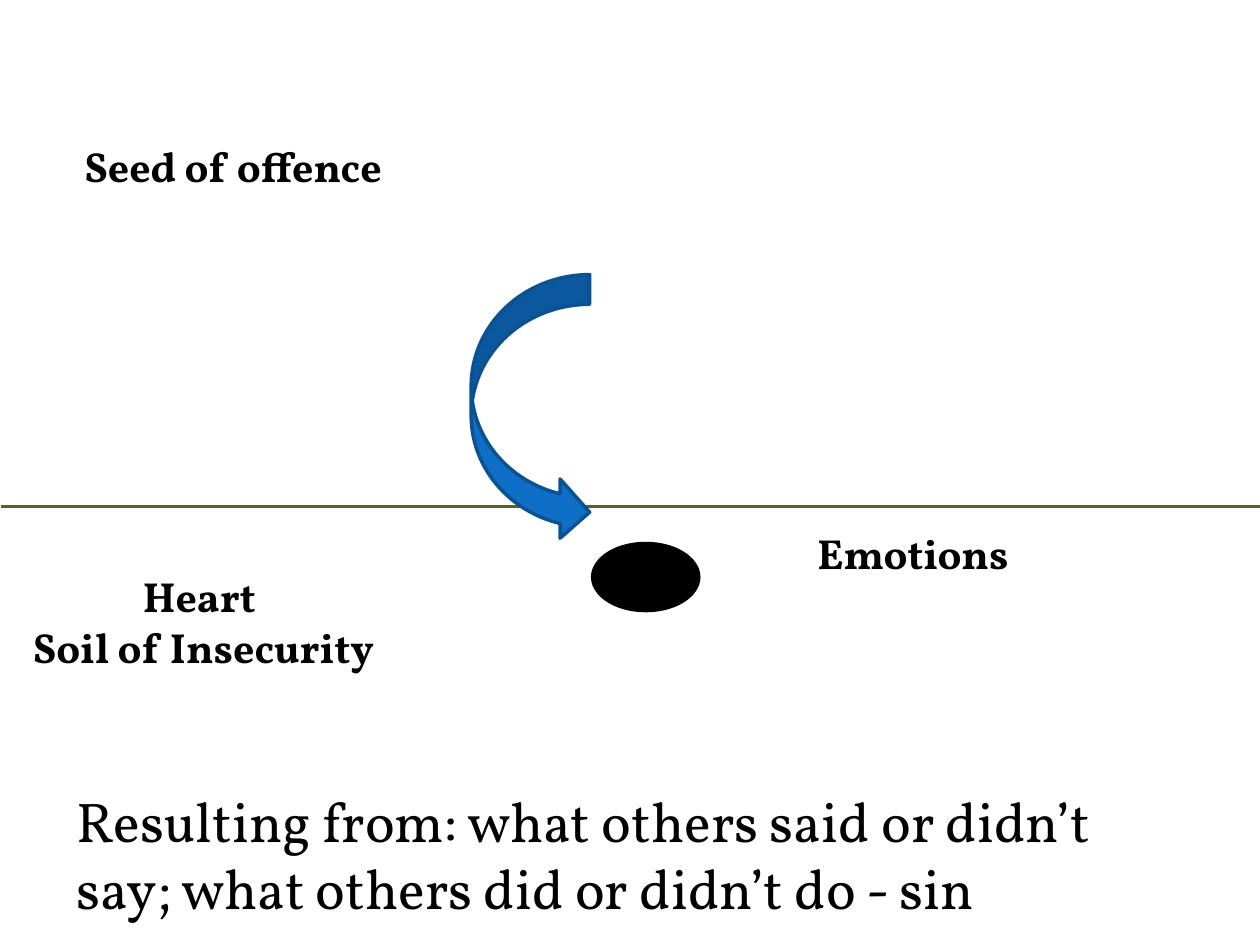
import pptx
import pptx.dml.color
import pptx.enum.shapes
import pptx.enum.text
import pptx.util
from dataclasses import dataclass

Inches = pptx.util.Inches
Shape = pptx.enum.shapes.MSO_SHAPE
Align = pptx.enum.text.PP_ALIGN


@dataclass(frozen=True)
class Theme:
    font: str = "Vollkorn"
    ink: str = "000000"
    blue: str = "0F6FC6"
    navy: str = "0B5292"
    green: str = "546422"
    label: int = 24
    body: int = 32
    stroke: int = 2


THEME = Theme()

# Outline of the ground, in inches from its box's top left corner
GROUND = [
    (0, 0.23), (0.58, 0.25), (0.68, 0.26), (0.75, 0.28), (1.17, 0.26),
    (1.86, 0.25), (2.38, 0.23), (2.62, 0.22), (2.74, 0.21), (2.93, 0.19),
    (3.51, 0.21), (3.55, 0.22), (3.65, 0.23), (3.72, 0.25), (4.33, 0.23),
    (4.47, 0.22), (4.68, 0.21), (4.74, 0.19), (4.85, 0.18), (4.93, 0.16),
    (5.81, 0.17), (6.2, 0.17), (6.6, 0.16), (6.76, 0.13), (6.84, 0.1),
    (6.91, 0.09), (7.41, 0.1), (7.47, 0.12), (8.22, 0.11), (8.36, 0.08),
    (8.48, 0.05), (8.6, 0.02), (8.9, 0.02), (9.05, 0.03), (9.12, 0.04),
    (9.16, 0.06), (9.58, 0.05), (9.64, 0.04), (9.78, 0.02), (9.85, 0),
    (9.91, 0), (9.99, 0.02),
]


def color(code):
    return pptx.dml.color.RGBColor.from_string(code)


def apply(target, **values):
    for name, value in values.items():
        setattr(target, name, value)


def paint(shape, fill=None, line=None):
    shape.shadow.inherit = False
    for part, code in ((shape.fill, fill), (shape.line.fill, line)):
        if code:
            part.solid()
            part.fore_color.rgb = color(code)
        else:
            part.background()
    if line:
        shape.line.width = pptx.util.Pt(THEME.stroke)


def text(slide, box, words, size=THEME.label, bold=True,
         align=Align.CENTER, inset=(0, 0)):
    """Write words in box; inset is the side and the top margin."""
    frame = slide.shapes.add_textbox(*map(Inches, box)).text_frame
    side, top = map(Inches, inset)
    apply(frame, word_wrap=True, text=words, margin_left=side,
          margin_right=side, margin_top=top, margin_bottom=top)
    para = frame.paragraphs[0]
    para.alignment = align
    for run in para.runs:
        apply(run.font, name=THEME.font, size=pptx.util.Pt(size), bold=bold)
        run.font.color.rgb = color(THEME.ink)


def ground(slide, box):
    left, top = map(Inches, box[:2])
    first, *rest = GROUND
    build = slide.shapes.build_freeform(*first, scale=Inches(1))
    build.add_line_segments(rest, close=False)
    paint(build.convert_to_shape(left, top), line=THEME.green)


def solid(slide, kind, box, fill, line=None):
    paint(slide.shapes.add_shape(kind, *map(Inches, box)), fill, line)


def main():
    deck = pptx.Presentation()
    apply(deck, slide_width=Inches(10), slide_height=Inches(7.5))
    slide = deck.slides.add_slide(deck.slide_layouts[6])
    pad = (0.1, 0.05)

    ground(slide, (0.01, 4.02, 9.99, 0.27))
    text(slide, (0.2, 4.53, 2.83, 0.91), "Heart \vSoil of Insecurity")
    text(slide, (0.51, 6.19, 8.74, 1.18),
         "Resulting from: what others said or didn’t say; "
         "what others did or didn’t do - sin",
         THEME.body, False, Align.LEFT, pad)
    solid(slide, Shape.OVAL, (4.69, 4.3, 0.87, 0.56), THEME.ink)
    solid(slide, Shape.CURVED_RIGHT_ARROW, (3.74, 2.18, 0.94, 2.12),
          THEME.blue, THEME.navy)
    text(slide, (0.51, 1.07, 2.68, 0.5), "Seed of offence", inset=pad)
    text(slide, (6.26, 4.19, 1.97, 0.49), "Emotions")
    deck.save("out.pptx")


if __name__ == "__main__":
    main()
